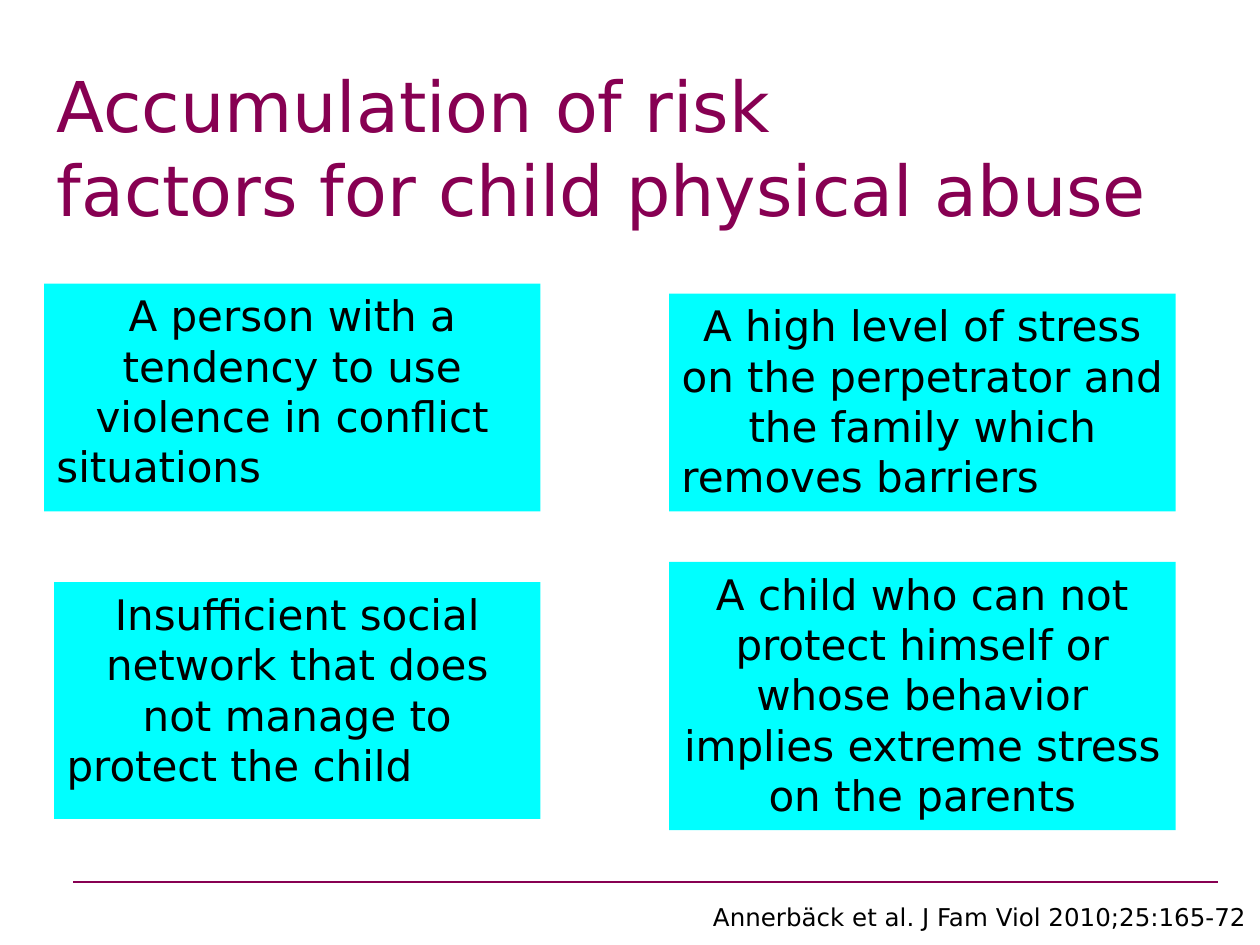
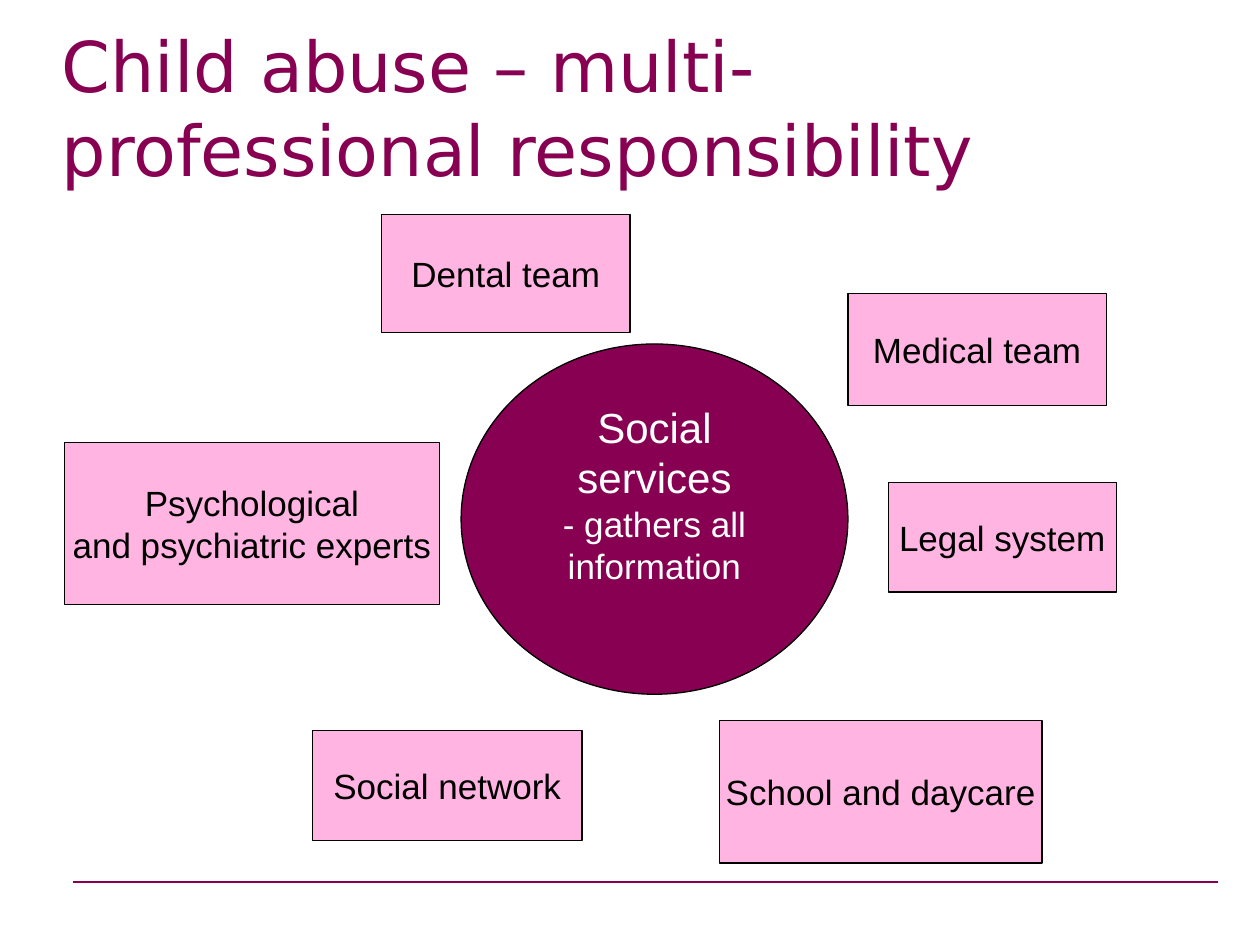
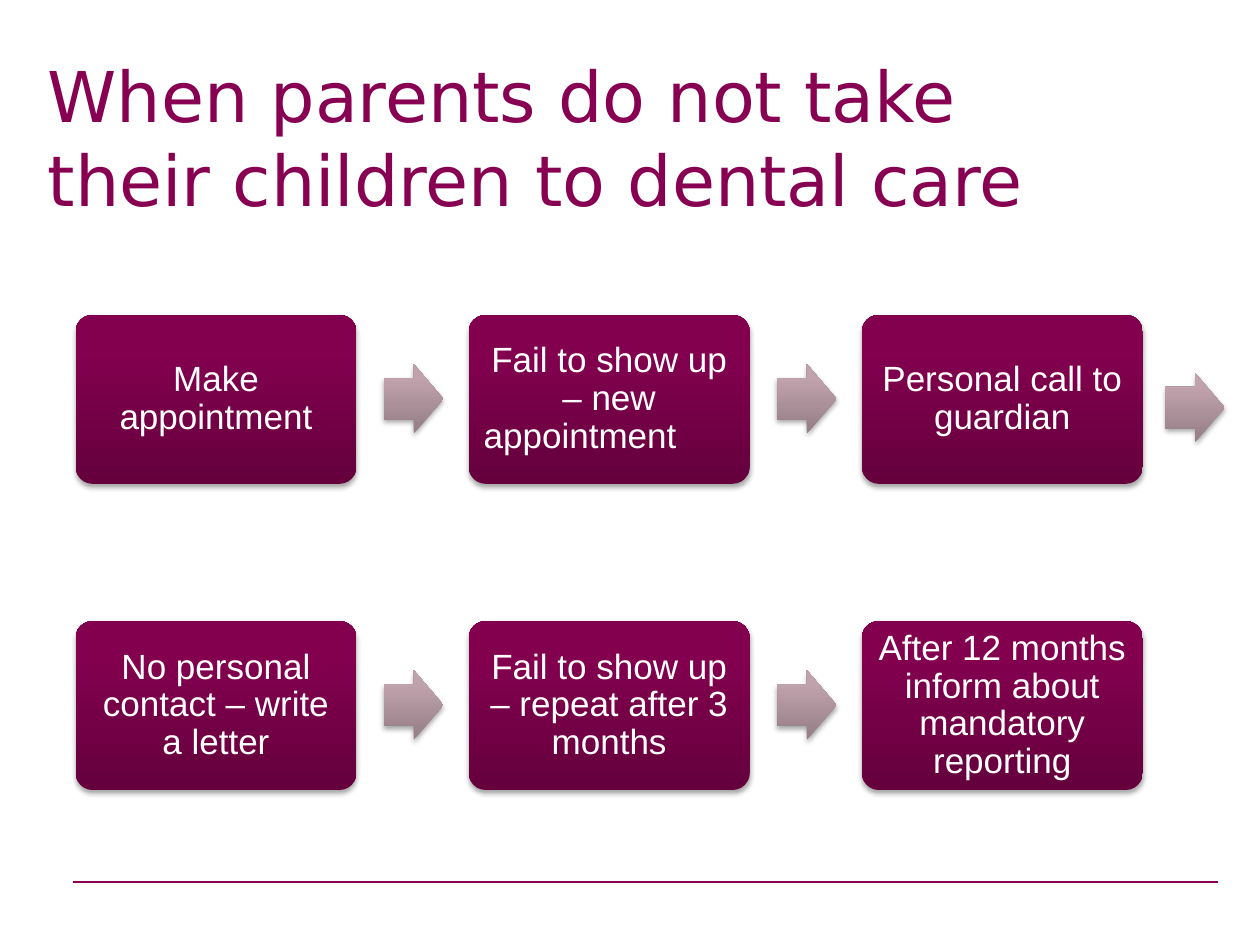
from copy import deepcopy

from pptx import Presentation
from pptx.dml.color import RGBColor
from pptx.enum.shapes import MSO_CONNECTOR, MSO_SHAPE as SHAPE
from pptx.enum.text import MSO_ANCHOR as ANCHOR, MSO_AUTO_SIZE, PP_ALIGN as ALIGN
from pptx.oxml.ns import qn
from pptx.util import Inches, Pt
from lxml.etree import SubElement

COLORS = {
    "plum": "870052",
    "cyan": "00FFFF",
    "pink": "FFB4E2",
    "black": "000000",
    "white": "FFFFFF",
}
STEP_GRADIENT = [(0, "65003D"), (0.8, "83004F"), (1, "830050")]
ARROW_GRADIENT = [(0, "947D85"), (0.8, "C0A2AC"), (1, "C2A3AD")]
HEAD_FONT, BODY_FONT = "DejaVu Sans", "Arial"


def rgb(name):
    return RGBColor.from_string(COLORS[name])


class Deck:
    """Holds the shared style and the slide being built."""

    def __init__(self):
        self.prs = Presentation()
        self.prs.slide_width, self.prs.slide_height = Inches(10), Inches(7.5)
        self.slide = None

    def new_slide(self, title, box):
        """Start a slide with its footer rule and title."""
        self.slide = self.prs.slides.add_slide(self.prs.slide_layouts[5])
        self.rule(0.58, 9.67, 7)
        heading = self.slide.shapes.title
        heading.left, heading.top, heading.width, heading.height = map(Inches, box)
        self.fill_text(heading.text_frame, [(title, 40, ALIGN.LEFT)], HEAD_FONT, "plum")

    def rule(self, left, right, y):
        line = self.slide.shapes.add_connector(
            MSO_CONNECTOR.STRAIGHT, Inches(left), Inches(y), Inches(right), Inches(y))
        line.line.color.rgb = rgb("plum")
        line.line.width = Pt(0.75)
        SubElement(line.element.spPr, qn("a:effectLst"))

    def fill_text(self, frame, paragraphs, font, color, anchor=ANCHOR.TOP,
                  wrap=True, spacing=None):
        """Fill a frame from (text, size, alignment) entries."""
        frame.auto_size = MSO_AUTO_SIZE.NONE
        frame.word_wrap = wrap
        frame.vertical_anchor = anchor
        for index, (text, size, align) in enumerate(paragraphs):
            paragraph = frame.paragraphs[0] if index == 0 else frame.add_paragraph()
            paragraph.alignment = align
            paragraph.line_spacing = spacing
            for number, line in enumerate(text.split("\n")):
                if number:
                    paragraph.add_line_break()
                run = paragraph.add_run()
                run.text = line
                run.font.size = Pt(size)
                run.font.name = font
                run.font.color.rgb = rgb(color)

    def text(self, box, paragraphs, font, color):
        label = self.slide.shapes.add_textbox(*map(Inches, box))
        self.fill_text(label.text_frame, paragraphs, font, color)

    def shape(self, kind, box, fill=None, outline=None):
        shape = self.slide.shapes.add_shape(kind, *map(Inches, box))
        shape.shadow.inherit = False
        if fill:
            shape.fill.solid()
            shape.fill.fore_color.rgb = rgb(fill)
        if outline:
            shape.line.color.rgb = rgb(outline)
            shape.line.width = Pt(0.75)
        else:
            shape.line.fill.background()
        return shape

    def raised(self, kind, box, gradient, adjustments):
        """Add a shape with a vertical gradient and a soft shadow."""
        shape = self.shape(kind, box)
        for index, value in enumerate(adjustments):
            shape.adjustments[index] = value
        shape.fill.gradient()
        shape.fill.gradient_angle = 90
        properties = shape.element.spPr
        stops = properties.find(".//" + qn("a:gsLst"))
        stops.append(deepcopy(stops[-1]))
        for stop, (position, color) in zip(shape.fill.gradient_stops, gradient):
            stop.position = position
            stop.color.rgb = RGBColor.from_string(color)
        shadow = SubElement(
            properties.find(qn("a:effectLst")), qn("a:outerShdw"),
            blurRad=str(Pt(3.1)), dist=str(Pt(1.8)), dir="5400000", rotWithShape="0")
        tone = SubElement(shadow, qn("a:srgbClr"), val=COLORS["black"])
        SubElement(tone, qn("a:alpha"), val="35000")
        return shape

    def factor(self, box, text, last_line=None):
        """Add a risk factor, its last line at the left if given."""
        lines = [(text, 24, ALIGN.CENTER)]
        if last_line:
            lines.append((last_line, 24, ALIGN.LEFT))
        panel = self.shape(SHAPE.RECTANGLE, box, "cyan")
        self.fill_text(panel.text_frame, lines, HEAD_FONT, "black")

    def partner(self, box, *lines):
        panel = self.shape(SHAPE.RECTANGLE, box, "pink", "black")
        self.fill_text(panel.text_frame, [(line, 20, ALIGN.CENTER) for line in lines],
                       BODY_FONT, "black", ANCHOR.MIDDLE, wrap=False)

    def step(self, left, top, text, last_line=None):
        lines = [(text, 20, ALIGN.CENTER)]
        if last_line:
            lines.append((last_line, 20, ALIGN.LEFT))
        card = self.raised(SHAPE.ROUNDED_RECTANGLE, (left, top, 2.23, 1.34),
                           STEP_GRADIENT, [0.1])
        frame = card.text_frame
        frame.margin_left = frame.margin_right = Inches(0.08)
        frame.margin_top = frame.margin_bottom = Inches(0.08)
        self.fill_text(frame, lines, BODY_FONT, "white", ANCHOR.MIDDLE, spacing=0.9)

    def arrow(self, left, top):
        self.raised(SHAPE.RIGHT_ARROW, (left, top, 0.47, 0.55),
                    ARROW_GRADIENT, [0.6, 0.5])


def risk_factors(deck):
    deck.new_slide("Accumulation of risk\nfactors for child physical abuse",
                   (0.35, 0.45, 8.9, 1.25))
    deck.factor((0.35, 2.25, 3.94, 1.81),
                "A person with a tendency to use violence in conflict", "situations")
    deck.factor((5.31, 2.33, 4.02, 1.73),
                "A high level of stress on the perpetrator and the family which",
                "removes barriers")
    deck.factor((0.43, 4.62, 3.86, 1.88),
                "Insufficient social network that does not manage to",
                "protect the child")
    deck.factor((5.31, 4.46, 4.02, 2.13),
                "A child who can not protect himself or whose behavior "
                "implies extreme stress on the parents")
    deck.text((2.48, 7.11, 7.51, 0.34),
              [("Annerbäck et al. J Fam Viol 2010;25:165-72", 14, ALIGN.RIGHT)],
              HEAD_FONT, "black")


def shared_responsibility(deck):
    deck.new_slide("Child abuse – multi-professional responsibility",
                   (0.39, 0.13, 8.94, 0.94))
    # Partners around the hub
    deck.partner((2.48, 5.8, 2.14, 0.87), "Social network")
    deck.partner((3.03, 1.7, 1.97, 0.94), "Dental team")
    deck.partner((6.73, 2.33, 2.05, 0.89), "Medical team")
    deck.partner((0.51, 3.51, 2.98, 1.29), "Psychological", "and psychiatric experts")
    deck.partner((5.71, 5.72, 2.56, 1.13), "School and daycare")
    deck.partner((7.05, 3.83, 1.81, 0.87), "Legal system")
    # Social services hub
    hub = deck.shape(SHAPE.OVAL, (3.66, 2.73, 3.07, 2.78), "plum", "black")
    deck.fill_text(hub.text_frame,
                   [("Social services", 24, ALIGN.CENTER),
                    ("- gathers all information", 20, ALIGN.CENTER)],
                   BODY_FONT, "white")


def missed_appointments(deck):
    deck.new_slide("When parents do not take their children to dental care",
                   (0.28, 0.37, 8.5, 1.25))
    rows = [
        (2.5, [("Make appointment",),
               ("Fail to show up – new", "appointment"),
               ("Personal call to guardian",)]),
        (4.93, [("No personal contact – write a letter",),
                ("Fail to show up – repeat after 3 months",),
                ("After 12 months inform about mandatory reporting",)]),
    ]
    for top, steps in rows:
        for column, step in enumerate(steps):
            left = 0.6 + 3.12 * column
            deck.step(left, top, *step)
            if column < len(steps) - 1:
                deck.arrow(left + 2.45, top + 0.39)
    # Arrow leading on to the second row
    deck.arrow(9.25, 2.96)


def main():
    deck = Deck()
    risk_factors(deck)
    shared_responsibility(deck)
    missed_appointments(deck)
    deck.prs.save("out.pptx")


if __name__ == "__main__":
    main()
